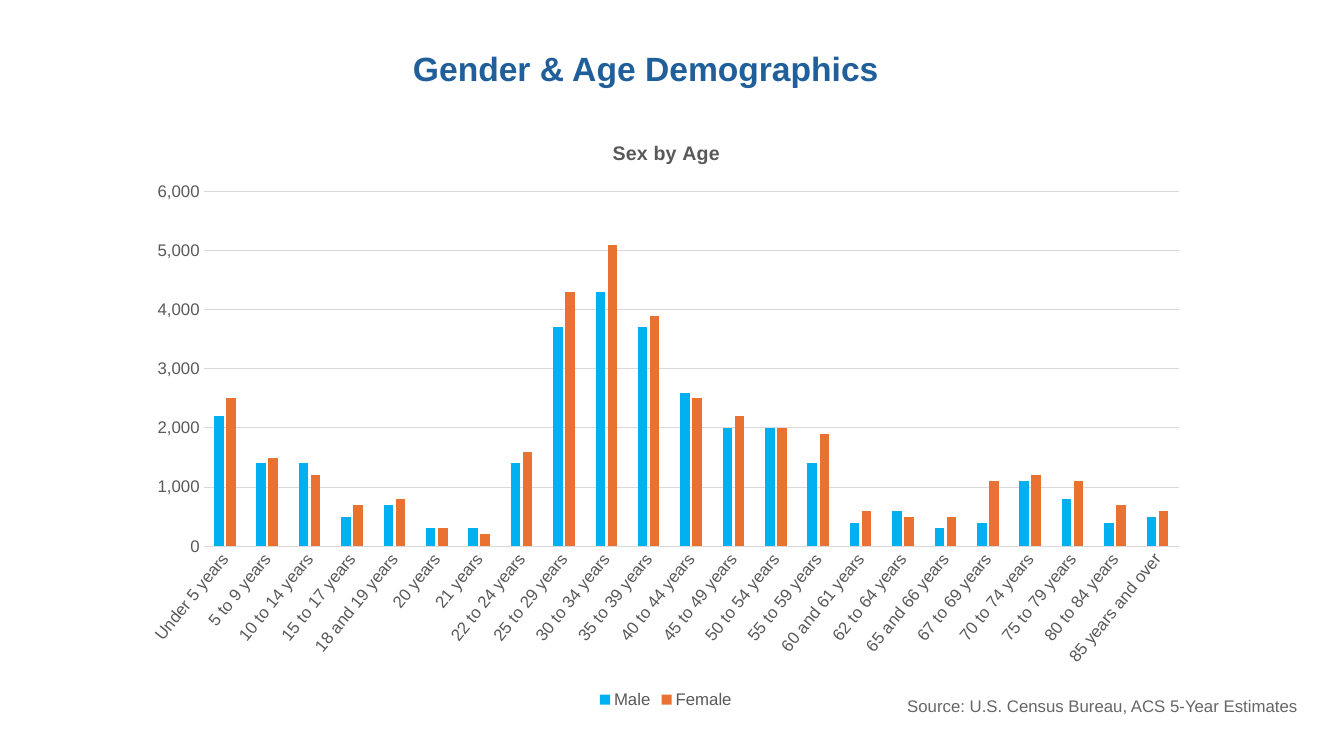
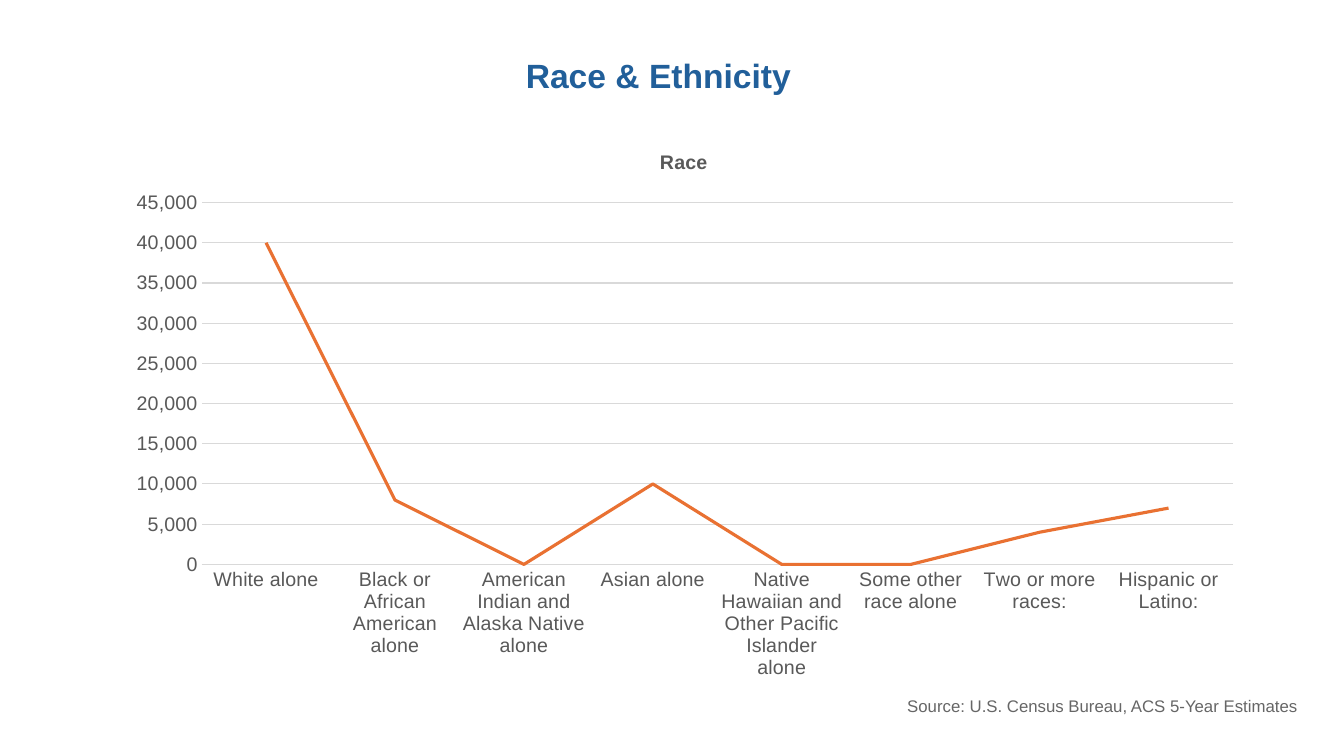
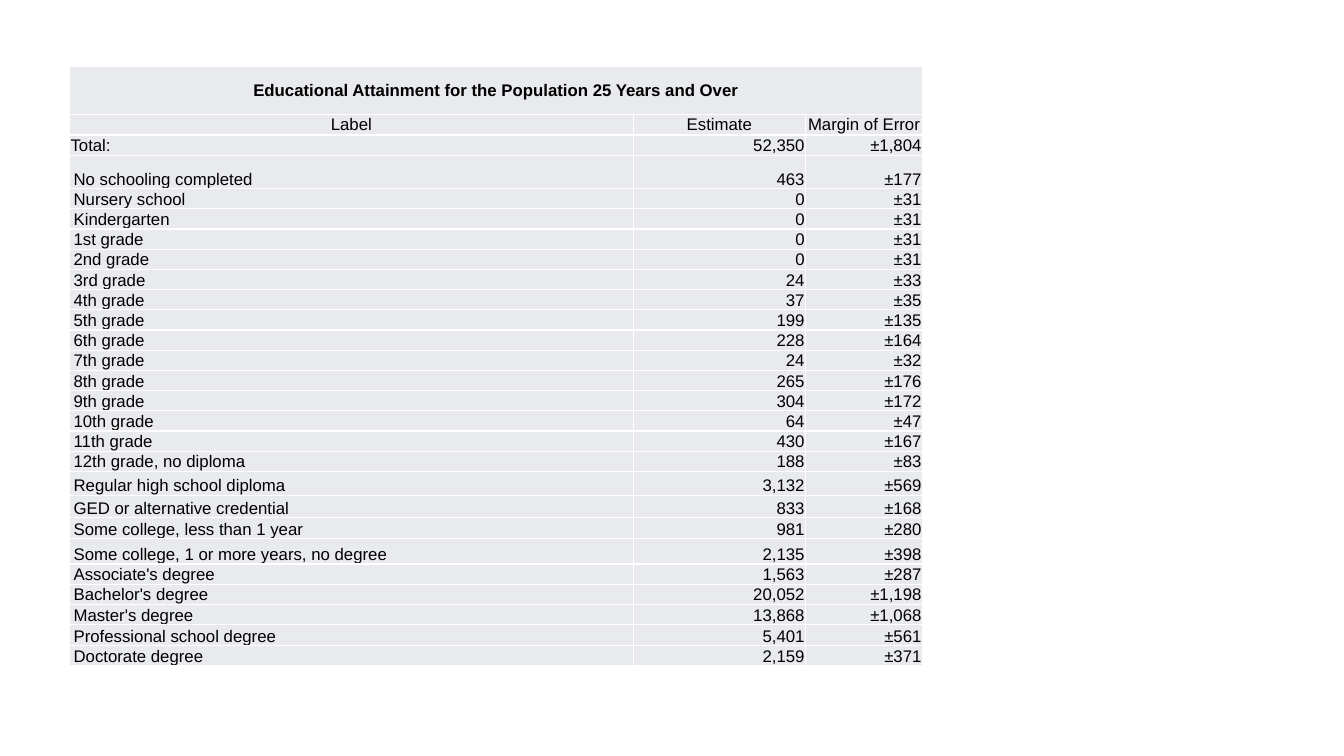
from lxml import etree
from pptx import Presentation
from pptx.chart.data import CategoryChartData
from pptx.dml.color import RGBColor
from pptx.enum.chart import XL_CHART_TYPE as CT, XL_LEGEND_POSITION as LP, XL_TICK_MARK as TM
from pptx.enum.text import MSO_ANCHOR as ANCHOR, MSO_AUTO_SIZE as AUTO, PP_ALIGN as AL
from pptx.oxml import parse_xml
from pptx.oxml.ns import nsdecls, qn
from pptx.util import Inches, Pt

COLORS = {
    "title": "215F9A", "source": "666666", "chart_text": "595959",
    "grid": "D9D9D9", "male": "00B0F0", "female": "E97132",
    "cell": "E8EAED", "border": "FFFFFF", "table_text": "000000",
}
FONT = "Arial"
SOURCE = "Source: U.S. Census Bureau, ACS 5-Year Estimates"


def style(font, size, color, bold=False):
    font.name, font.size, font.bold = FONT, Pt(size), bold
    font.color.rgb = RGBColor.from_string(COLORS[color])


def place(parent, index, chart_size, box):
    """Lay out a chart part by its box in inches: x, y and, for the plot, w, h."""
    for old in parent.findall(qn("c:layout")):
        parent.remove(old)
    layout = parse_xml(f"<c:layout {nsdecls('c')}><c:manualLayout/></c:layout>")
    settings = {"layoutTarget": "inner"} if len(box) == 4 else {}
    settings.update(xMode="edge", yMode="edge")
    for name, value, whole in zip("xywh", box, chart_size * 2):
        settings[name] = value / whole
    for name, value in settings.items():
        etree.SubElement(layout[0], qn(f"c:{name}")).set("val", str(value))
    parent.insert(index, layout)


prs = Presentation()
prs.slide_width, prs.slide_height = Inches(13.33), Inches(7.5)

# Chart slides
CHARTS = [
    dict(
        title="Gender & Age Demographics", title_box=(0.79, 0.23, 11.23, 0.95),
        chart_title="Sex by Age", chart_box=(1.31, 1.19, 10.59, 5.88),
        kind=CT.COLUMN_CLUSTERED, size=12, top=6000, step=1000, label_angle=-51,
        chart_title_at=(4.73, 0.17), plot_box=(0.71, 0.71, 9.67, 3.52),
        cats=["Under 5 years", "5 to 9 years", "10 to 14 years", "15 to 17 years",
              "18 and 19 years", "20 years", "21 years", "22 to 24 years",
              "25 to 29 years", "30 to 34 years", "35 to 39 years", "40 to 44 years",
              "45 to 49 years", "50 to 54 years", "55 to 59 years", "60 and 61 years",
              "62 to 64 years", "65 and 66 years", "67 to 69 years", "70 to 74 years",
              "75 to 79 years", "80 to 84 years", "85 years and over"],
        series=[
            ("Male", "male", [2200, 1400, 1400, 500, 700, 300, 300, 1400, 3700, 4300, 3700, 2600,
                              2000, 2000, 1400, 400, 600, 300, 400, 1100, 800, 400, 500]),
            ("Female", "female", [2500, 1500, 1200, 700, 800, 300, 200, 1600, 4300, 5100, 3900, 2500,
                                  2200, 2000, 1900, 600, 500, 500, 1100, 1200, 1100, 700, 600]),
        ],
    ),
    dict(
        title="Race & Ethnicity", title_box=(0.78, 0.4, 11.5, 0.74),
        chart_title="Race", chart_box=(1.12, 1.29, 11.32, 5.56),
        kind=CT.LINE, size=14, top=45000, step=5000, label_angle=0,
        chart_title_at=(5.39, 0.16), plot_box=(0.88, 0.72, 10.23, 3.59),
        cats=["White alone", "Black or African American alone",
              "American Indian and Alaska Native alone", "Asian alone",
              "Native Hawaiian and Other Pacific Islander alone",
              "Some other race alone", "Two or more races:", "Hispanic or Latino:"],
        series=[("Series 1", "female", [40000, 8000, 0, 10000, 0, 0, 4000, 7000])],
    ),
]

for page in CHARTS:
    s = prs.slides.add_slide(prs.slide_layouts[5])

    # Slide title
    title = s.shapes.title
    title.left, title.top, title.width, title.height = map(Inches, page["title_box"])
    tf = title.text_frame
    tf.text = page["title"]
    tf.vertical_anchor = ANCHOR.MIDDLE
    p = tf.paragraphs[0]
    p.alignment, p.line_spacing = AL.CENTER, 0.9
    style(p.font, 24, "title", True)

    # Chart and its title
    data = CategoryChartData(number_format="#,##0")
    data.categories = page["cats"]
    for name, _, values in page["series"]:
        data.add_series(name, values)
    chart = s.shapes.add_chart(page["kind"], *map(Inches, page["chart_box"]), data).chart
    style(chart.font, page["size"], "chart_text")
    chart.has_title = True
    chart.chart_title.include_in_layout = False
    tf = chart.chart_title.text_frame
    tf.text = page["chart_title"]
    style(tf.paragraphs[0].font, 14, "chart_text", True)
    chart_size = page["chart_box"][2:]
    place(chart.element.find(".//" + qn("c:title")), 1, chart_size, page["chart_title_at"])
    place(chart.element.find(".//" + qn("c:plotArea")), 0, chart_size, page["plot_box"])

    # Axes
    cat, val = chart.category_axis, chart.value_axis
    for axis in (cat, val):
        axis.major_tick_mark = axis.minor_tick_mark = TM.NONE
        style(axis.tick_labels.font, page["size"], "chart_text")
    if page["label_angle"]:
        body = chart.element.find(f".//{qn('c:catAx')}/{qn('c:txPr')}/{qn('a:bodyPr')}")
        body.set("rot", str(page["label_angle"] * 60000))
        body.set("vert", "horz")
    val.minimum_scale, val.maximum_scale, val.major_unit = 0, page["top"], page["step"]
    val.tick_labels.number_format = "#,##0"
    val.tick_labels.number_format_is_linked = False
    val.format.line.fill.background()
    val.has_major_gridlines = True
    for line in (cat.format.line, val.major_gridlines.format.line):
        line.width = Pt(0.75)
        line.color.rgb = RGBColor.from_string(COLORS["grid"])

    # Series and legend
    plot = chart.plots[0]
    plot.vary_by_categories = False
    for series, (_, color, _) in zip(plot.series, page["series"]):
        rgb = RGBColor.from_string(COLORS[color])
        if page["kind"] == CT.LINE:
            series.smooth = False
            series.format.line.width = Pt(2.25)
            series.format.line.color.rgb = rgb
        else:
            series.format.fill.solid()
            series.format.fill.fore_color.rgb = rgb
    chart.has_legend = len(page["series"]) > 1
    if chart.has_legend:
        plot.gap_width, plot.overlap = 219, -27
        chart.legend.position = LP.BOTTOM
        chart.legend.include_in_layout = False
        style(chart.legend.font, 12, "chart_text")

    # Source line
    tf = s.shapes.add_textbox(Inches(8.9), Inches(6.85), Inches(4.14), Inches(0.3)).text_frame
    tf.word_wrap, tf.auto_size = True, AUTO.SHAPE_TO_FIT_TEXT
    tf.text = SOURCE
    style(tf.paragraphs[0].font, 12, "source")

# Table slide
ROWS = [
    ("Educational Attainment for the Population 25 Years and Over", "", ""),
    ("Label", "Estimate", "Margin of Error"),
    ("Total:", "52,350", "±1,804"),
    ("No schooling completed", "463", "±177"),
    ("Nursery school", "0", "±31"),
    ("Kindergarten", "0", "±31"),
    ("1st grade", "0", "±31"),
    ("2nd grade", "0", "±31"),
    ("3rd grade", "24", "±33"),
    ("4th grade", "37", "±35"),
    ("5th grade", "199", "±135"),
    ("6th grade", "228", "±164"),
    ("7th grade", "24", "±32"),
    ("8th grade", "265", "±176"),
    ("9th grade", "304", "±172"),
    ("10th grade", "64", "±47"),
    ("11th grade", "430", "±167"),
    ("12th grade, no diploma", "188", "±83"),
    ("Regular high school diploma", "3,132", "±569"),
    ("GED or alternative credential", "833", "±168"),
    ("Some college, less than 1 year", "981", "±280"),
    ("Some college, 1 or more years, no degree", "2,135", "±398"),
    ("Associate's degree", "1,563", "±287"),
    ("Bachelor's degree", "20,052", "±1,198"),
    ("Master's degree", "13,868", "±1,068"),
    ("Professional school degree", "5,401", "±561"),
    ("Doctorate degree", "2,159", "±371"),
]
COL_WIDTHS = [5.59, 1.71, 1.16]
ROW_HEIGHT = 0.2
TALL_ROWS = {0: 0.48, 3: 0.33, 18: 0.24, 19: 0.22, 20: 0.21, 21: 0.25, 25: 0.21}

s = prs.slides.add_slide(prs.slide_layouts[6])
table = s.shapes.add_table(len(ROWS), len(COL_WIDTHS), Inches(0.69), Inches(0.66),
                           Inches(8.46), Inches(5.9)).table
table.first_row = table.horz_banding = False
for column, width in zip(table.columns, COL_WIDTHS):
    column.width = Inches(width)
table.cell(0, 0).merge(table.cell(0, 2))

for i, row in enumerate(ROWS):
    table.rows[i].height = Inches(TALL_ROWS.get(i, ROW_HEIGHT))
    for j, text in enumerate(row):
        cell = table.cell(i, j)
        header = i < 2
        cell.text = text
        cell.vertical_anchor = ANCHOR.MIDDLE if header else ANCHOR.BOTTOM
        cell.margin_left = Inches(0.04 if i > 2 and j == 0 else 0.01)
        cell.margin_right = Inches(0.01)
        cell.margin_top = cell.margin_bottom = 0
        p = cell.text_frame.paragraphs[0]
        p.alignment = AL.CENTER if header else AL.RIGHT if j else AL.LEFT
        style(p.font, 12, "table_text", i == 0)
        for side in "LRTB":
            cell._tc.get_or_add_tcPr().append(parse_xml(
                f'<a:ln{side} {nsdecls("a")} w="{Pt(1)}"><a:solidFill>'
                f'<a:srgbClr val="{COLORS["border"]}"/></a:solidFill></a:ln{side}>'))
        cell.fill.solid()
        cell.fill.fore_color.rgb = RGBColor.from_string(COLORS["cell"])

prs.save("out.pptx")
